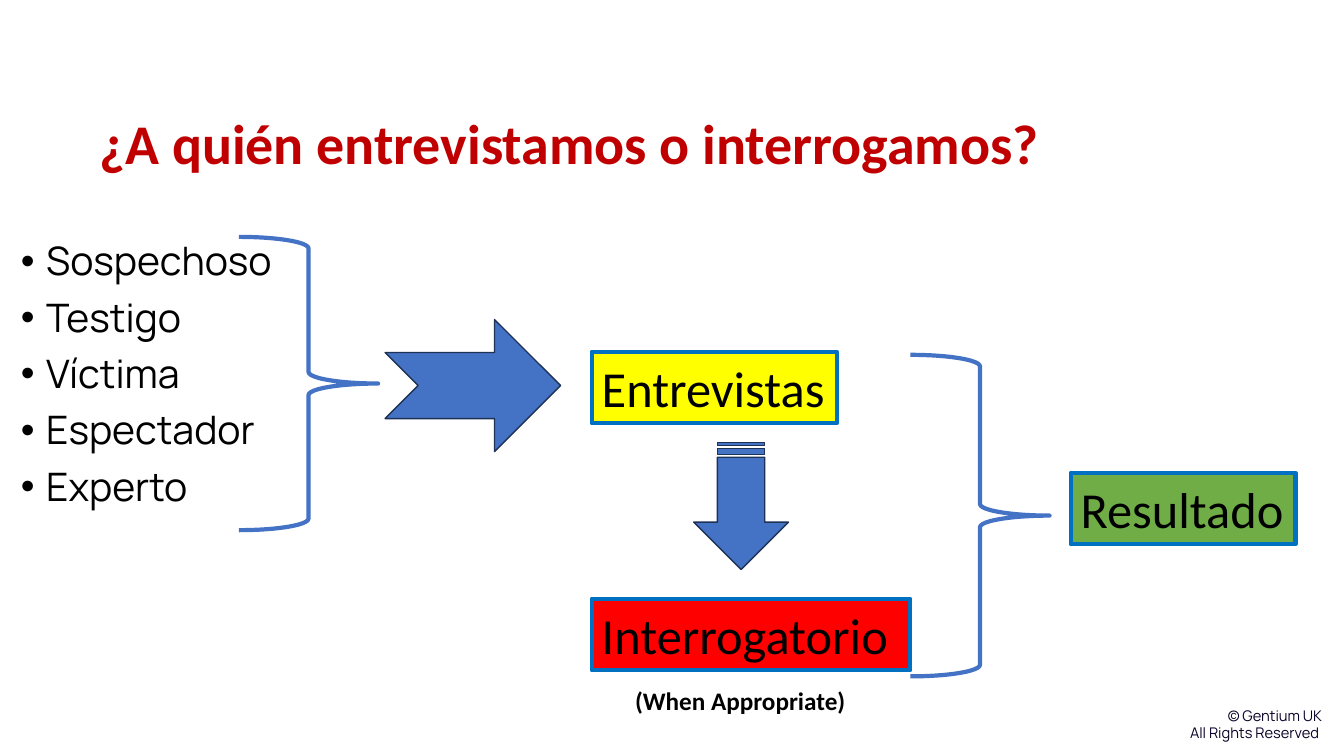
"""Build the slide on whom to interview or interrogate."""
from pptx import Presentation
from pptx.dml.color import RGBColor
from pptx.enum.shapes import MSO_SHAPE as Shape
from pptx.enum.text import MSO_ANCHOR as Anchor, PP_ALIGN as Align
from pptx.oxml import parse_xml
from pptx.oxml.ns import nsdecls
from pptx.util import Inches, Pt

BLACK, NAVY, BLUE, EDGE = "000000", "0A0128", "4472C4", "1E3256"
RED, BORDER = "C00000", "0070C0"
PEOPLE = ["Sospechoso", "Testigo", "Víctima", "Espectador", "Experto"]
RIGHTS = ["© Gentium UK", "All Rights Reserved "]
TITLE = "¿A quién entrevistamos o interrogamos?"
NOTE = "(When Appropriate)"
STEPS = [
    ("Entrevistas", (5.87, 3.49, 2.43, 0.71), "FFFF00"),
    ("Interrogatorio", (5.87, 5.94, 3.16, 0.71), "FF0000"),
    ("Resultado", (10.62, 4.69, 2.23, 0.71), "70AD47"),
]
BRACES = [(2.37, 2.35, 1.38, 2.91), (9.03, 3.52, 1.38, 3.19)]
ARROWS = [
    (Shape.NOTCHED_RIGHT_ARROW, (3.82, 3.17, 1.74, 1.31), 0),
    (Shape.STRIPED_RIGHT_ARROW, (6.72, 4.55, 1.26, 0.94), 90),
]


def color(code):
    return RGBColor.from_string(code)


def add_run(para, text, size, face, code, bold=False):
    run = para.add_run()
    run.text = text
    font = run.font
    font.size, font.name, font.bold = Pt(size), face, bold
    font.color.rgb = color(code)


def add_box(slide, area, wrap=True, anchor=Anchor.TOP):
    frame = slide.shapes.add_textbox(*map(Inches, area)).text_frame
    frame.word_wrap, frame.vertical_anchor = wrap, anchor
    return frame


def add_form(slide, kind, area, fill, line, width):
    form = slide.shapes.add_shape(kind, *map(Inches, area))
    form.shadow.inherit = False
    if fill:
        form.fill.solid()
        form.fill.fore_color.rgb = color(fill)
    else:
        form.fill.background()
    form.line.color.rgb, form.line.width = color(line), Pt(width)
    return form


def add_lines(frame, lines):
    for i, text in enumerate(lines):
        yield (frame.add_paragraph() if i else frame.paragraphs[0]), text


def add_bullet(para):
    props = para._p.get_or_add_pPr()
    props.set("marL", str(Inches(0.25)))
    props.set("indent", str(Inches(-0.25)))
    props.append(parse_xml(f'<a:buFont {nsdecls("a")} typeface="Arial"/>'))
    props.append(parse_xml(f'<a:buChar {nsdecls("a")} char="•"/>'))


def main():
    deck = Presentation()
    deck.slide_width, deck.slide_height = Inches(13.33), Inches(7.5)
    slide = deck.slides.add_slide(deck.slide_layouts[6])

    frame = add_box(slide, (11.62, 6.96, 1.59, 0.45), wrap=False)
    for para, text in add_lines(frame, RIGHTS):
        para.alignment = Align.RIGHT
        add_run(para, text, 10.5, "Manrope", NAVY)

    para = add_box(slide, (0.89, 0.46, 10.36, 1.98), anchor=Anchor.MIDDLE).paragraphs[0]
    para.line_spacing = 0.9
    add_run(para, TITLE, 40, "Calibri", RED, True)

    frame = add_box(slide, (0.11, 2.35, 3.78, 3.17))
    for para, text in add_lines(frame, PEOPLE):
        add_bullet(para)
        para.line_spacing = 0.9
        para.space_before = Pt(0 if text == PEOPLE[0] else 10)
        add_run(para, text, 28, "Manrope", BLACK)

    for text, area, fill in STEPS:
        frame = add_form(slide, Shape.RECTANGLE, area, fill, BORDER, 3).text_frame
        frame.word_wrap, frame.vertical_anchor = False, Anchor.TOP
        para = frame.paragraphs[0]
        para.alignment = Align.LEFT
        add_run(para, text, 36, "Calibri", BLACK)

    for area in BRACES:
        add_form(slide, Shape.RIGHT_BRACE, area, None, BLUE, 3)
    for kind, area, turn in ARROWS:
        add_form(slide, kind, area, BLUE, EDGE, 1).rotation = turn

    para = add_box(slide, (6.2, 6.75, 2.31, 0.4), wrap=False).paragraphs[0]
    add_run(para, NOTE, 18, "Calibri", BLACK, True)
    deck.save("out.pptx")


if __name__ == "__main__":
    main()
